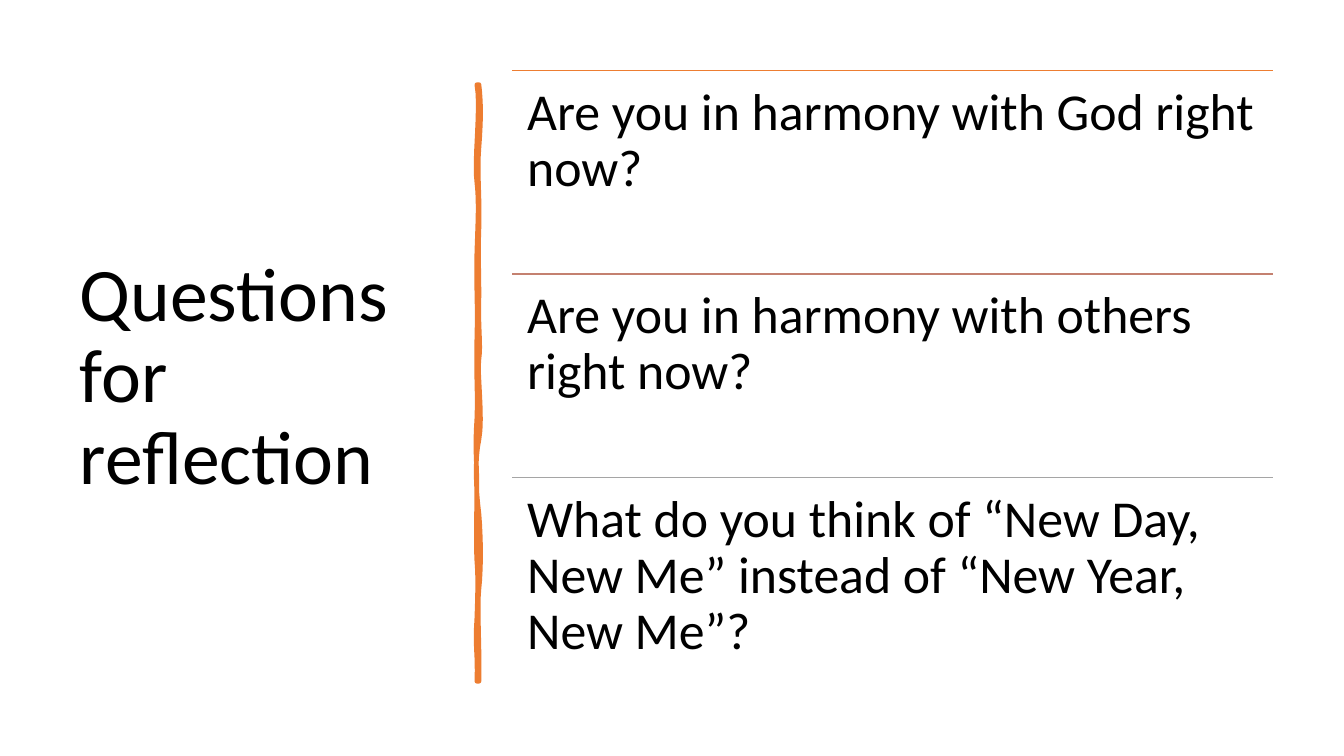
from dataclasses import dataclass

from lxml.etree import SubElement
from pptx import Presentation
from pptx.dml.color import RGBColor
from pptx.enum.shapes import MSO_CONNECTOR
from pptx.enum.text import MSO_ANCHOR, MSO_AUTO_SIZE, PP_ALIGN
from pptx.oxml.ns import qn
from pptx.util import Inches, Pt


@dataclass(frozen=True)
class Theme:
    """Colours, font and sizes of the slide."""
    font: str = "Calibri"
    text: str = "000000"
    accent: str = "ED7D31"
    rules: tuple = ("ED7D31", "C48170", "A5A5A5")
    title_size: float = 54
    question_size: float = 37
    line_spacing: float = 0.9
    rule_width: float = 1
    brush_width: float = 3.25
    inset: float = 0.15


QUESTIONS = (
    "Are you in harmony with God right now?",
    "Are you in harmony with others right now?",
    "What do you think of “New Day, New Me” instead of “New Year, New Me”?",
)
QUESTIONS_LEFT, QUESTIONS_TOP = 38.1, 9.33
QUESTIONS_WIDTH, QUESTION_HEIGHT = 56.64, 26.93

BRUSH_COLUMN, BRUSH_SWAY = 35.48, 0.08
BRUSH_RIGHT = (
    (2, 11.2), (4, 13.6), (4, 15.87), (2, 19.47), (0, 23.07), (3, 26),
    (2, 30.13), (1, 34.27), (2, 34.93), (2, 39.2), (1, 43.33), (4, 45.6),
    (2, 47.47), (0, 49.33), (6, 55.2), (2, 58.13), (-2, 60.93), (-1, 64.53),
    (2, 68), (4, 71.47), (4, 75.2), (2, 77.87), (0, 80.4), (3, 86.67),
    (2, 90.13),
)
BRUSH_LEFT = (
    (0, 90.13), (1, 86.13), (-2, 85.87), (0, 81.73), (1, 77.73), (1, 76),
    (0, 74.27), (-1, 72.53), (0, 66), (0, 63.6), (0, 61.2), (-2, 59.33),
    (0, 55.33), (1, 51.47), (-1, 49.73), (0, 44.67), (1, 39.73), (-1, 37.47),
    (0, 33.33), (1, 29.07), (2, 26.67), (0, 24.13), (-3, 21.73), (4, 13.87),
    (0, 11.2),
)


def curve_points(knots, steps=8):
    """Sample a chain of cubic curves whose ends are every third knot."""
    points = [knots[0]]
    for start in range(0, len(knots) - 1, 3):
        for step in range(1, steps + 1):
            t = step / steps
            weights = ((1 - t) ** 3, 3 * t * (1 - t) ** 2, 3 * t * t * (1 - t), t ** 3)
            segment = knots[start:start + 4]
            points.append(tuple(
                sum(weight * knot[axis] for weight, knot in zip(weights, segment))
                for axis in (0, 1)
            ))
    return points


class SlideBuilder:
    """Draws styled elements on a grid of 100 columns by 100 rows."""

    def __init__(self, presentation, theme):
        """Add a title-only slide to the presentation."""
        self.theme = theme
        self.column = presentation.slide_width / 100
        self.row = presentation.slide_height / 100
        self.slide = presentation.slides.add_slide(presentation.slide_layouts[5])

    def place(self, left, top, width, height):
        """Convert a grid box to slide lengths."""
        return (round(left * self.column), round(top * self.row),
                round(width * self.column), round(height * self.row))

    def set_text(self, text_frame, text, size):
        """Fill a text frame with one left-aligned paragraph."""
        text_frame.text = text
        text_frame.word_wrap = True
        text_frame.auto_size = MSO_AUTO_SIZE.NONE
        paragraph = text_frame.paragraphs[0]
        paragraph.alignment = PP_ALIGN.LEFT
        paragraph.line_spacing = self.theme.line_spacing
        font = paragraph.runs[0].font
        font.name = self.theme.font
        font.size = Pt(size)
        font.color.rgb = RGBColor.from_string(self.theme.text)

    def title(self, text, *box):
        """Place and fill the title placeholder."""
        title = self.slide.shapes.title
        title.left, title.top, title.width, title.height = self.place(*box)
        self.set_text(title.text_frame, text, self.theme.title_size)
        title.text_frame.vertical_anchor = MSO_ANCHOR.MIDDLE

    def question(self, text, *box):
        """Add a question in an evenly inset text box."""
        text_frame = self.slide.shapes.add_textbox(*self.place(*box)).text_frame
        inset = Inches(self.theme.inset)
        text_frame.margin_left = text_frame.margin_right = inset
        text_frame.margin_top = text_frame.margin_bottom = inset
        self.set_text(text_frame, text, self.theme.question_size)

    def rule(self, color, left, top, width):
        """Add a thin horizontal line."""
        x, y, length, _ = self.place(left, top, width, 0)
        line = self.slide.shapes.add_connector(MSO_CONNECTOR.STRAIGHT, x, y, x + length, y)
        line.line.color.rgb = RGBColor.from_string(color)
        line.line.width = Pt(self.theme.rule_width)
        SubElement(line._element.spPr, qn("a:effectLst"))

    def brush_stroke(self, outline):
        """Add a filled hand-drawn stroke with rounded corners."""
        points = [self.place(x, y, 0, 0)[:2] for x, y in outline]
        builder = self.slide.shapes.build_freeform(*points[0])
        builder.add_line_segments(points[1:], close=True)
        shape = builder.convert_to_shape()
        color = RGBColor.from_string(self.theme.accent)
        shape.shadow.inherit = False
        shape.fill.solid()
        shape.fill.fore_color.rgb = color
        shape.line.color.rgb = color
        shape.line.width = Pt(self.theme.brush_width)
        SubElement(shape._element.spPr.find(qn("a:ln")), qn("a:round"))


def main():
    """Build and save the reflection slide."""
    presentation = Presentation()
    presentation.slide_width = Inches(13.33)
    presentation.slide_height = Inches(7.5)
    theme = Theme()
    builder = SlideBuilder(presentation, theme)

    builder.title("Questions for reflection", 5.18, 9.33, 28.06, 81.47)
    edges = curve_points(BRUSH_RIGHT) + curve_points(BRUSH_LEFT)
    builder.brush_stroke([(BRUSH_COLUMN + BRUSH_SWAY * sway, row) for sway, row in edges])
    for index, (question, color) in enumerate(zip(QUESTIONS, theme.rules)):
        top = QUESTIONS_TOP + index * QUESTION_HEIGHT
        builder.rule(color, QUESTIONS_LEFT, top, QUESTIONS_WIDTH)
        builder.question(question, QUESTIONS_LEFT, top, QUESTIONS_WIDTH, QUESTION_HEIGHT)

    presentation.save("out.pptx")


if __name__ == "__main__":
    main()
